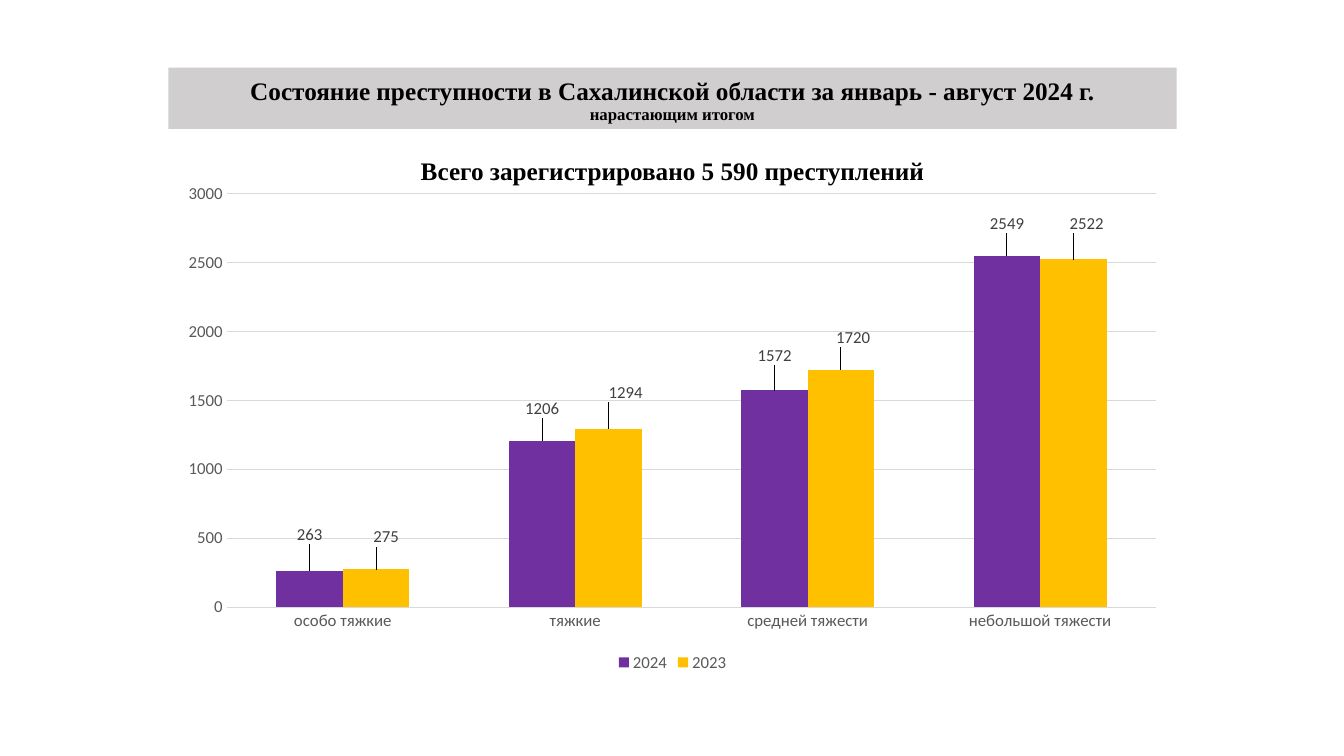
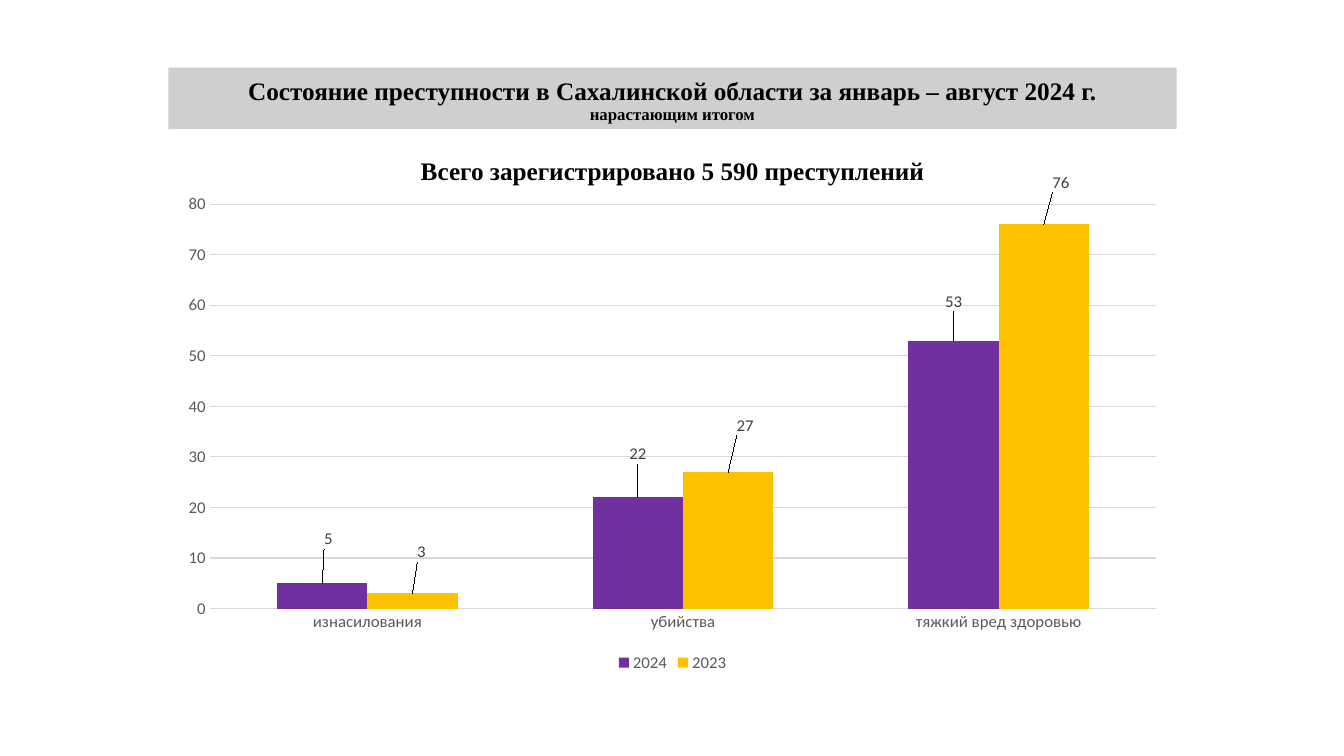
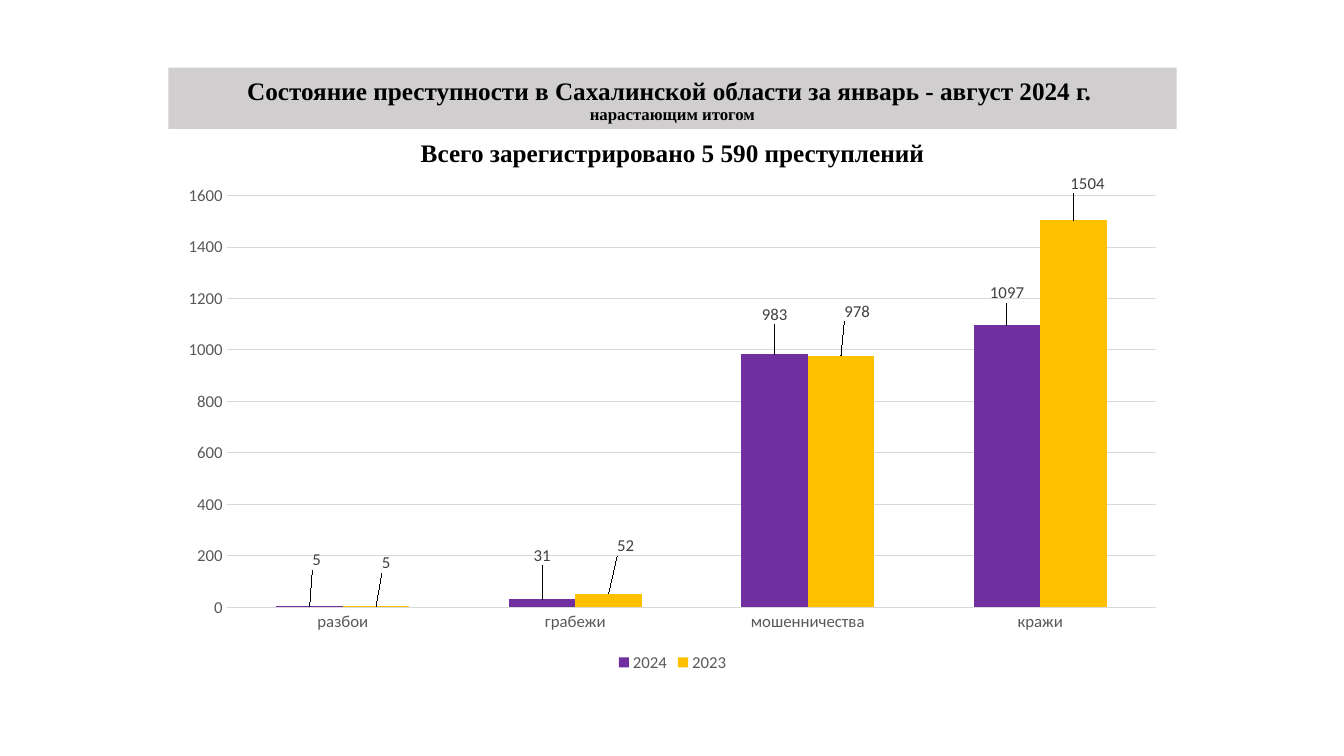
from dataclasses import dataclass
from typing import Any

from lxml import etree
from pptx import Presentation
from pptx import util as u
from pptx.chart import data
from pptx.dml.color import RGBColor
from pptx.enum import chart as ch
from pptx.enum import text
from pptx.oxml.ns import qn

COLORS = {
    "band": "D0CECE",
    "title": "000000",
    "axis": "595959",
    "label": "404040",
    "grid": "D9D9D9",
    "2024": "7030A0",
    "2023": "FFC000",
}
HEADING_FONT = "Times New Roman"
CHART_FONT = "Calibri"
LEFT, WIDTH = u.Inches(1.67), u.Inches(10)
TOTAL = "Всего зарегистрировано 5 590 преступлений"
PERIOD_NOTE = "нарастающим итогом"


@dataclass(frozen=True)
class YearSeries:
    year: str
    values: tuple[int, ...]
    label_shifts: tuple[tuple[float, float], ...]


@dataclass(frozen=True)
class CrimeSlide:
    heading: str
    total_top: float
    categories: tuple[str, ...]
    years: tuple[YearSeries, ...]


CRIME_SLIDES = (
    CrimeSlide(
        "Состояние преступности в Сахалинской области за январь - август 2024 г.",
        1.55,
        ("особо тяжкие", "тяжкие", "средней тяжести", "небольшой тяжести"),
        (
            YearSeries("2024", (263, 1206, 1572, 2549),
                       ((0, -4.4), (0, -3.6), (0, -4.2), (0, -3.6))),
            YearSeries("2023", (275, 1294, 1720, 2522),
                       ((1, -3.6), (1.7, -4.4), (1.2, -3.6), (1.3, -4.4))),
        ),
    ),
    CrimeSlide(
        "Состояние преступности в Сахалинской области за январь – август 2024 г.",
        1.55,
        ("изнасилования", "убийства", "тяжкий вред здоровью"),
        (
            YearSeries("2024", (5, 22, 53),
                       ((0.6, -6.2), (0, -6), (0, -5.2))),
            YearSeries("2023", (3, 27, 76),
                       ((0.9, -5.6), (1.7, -6.6), (1.7, -5.6))),
        ),
    ),
    CrimeSlide(
        "Состояние преступности в Сахалинской области за январь - август 2024 г. ",
        1.37,
        ("разбои", "грабежи", "мошенничества", "кражи"),
        (
            YearSeries("2024", (5, 31, 983, 1097),
                       ((0.7, -6.4), (0, -6), (0, -5.2), (0, -3.6))),
            YearSeries("2023", (5, 52, 978, 1504),
                       ((1, -5.8), (1.7, -6.8), (1.6, -6), (1.4, -4.6))),
        ),
    ),
)


def apply_format(target: Any, values: dict[str, Any]) -> None:
    for name, value in values.items():
        setattr(target, name, value)


def style_font(font: Any, face: str, size: float, color: str, bold: bool = False) -> None:
    apply_format(font, {"name": face, "size": u.Pt(size), "bold": bold})
    font.color.rgb = RGBColor.from_string(COLORS[color])


def add_heading(slide: Any, heading: str) -> None:
    band = slide.shapes.title
    apply_format(band, {"left": LEFT, "top": u.Inches(0.67),
                        "width": WIDTH, "height": u.Inches(0.61)})
    band.fill.solid()
    band.fill.fore_color.rgb = RGBColor.from_string(COLORS["band"])
    apply_format(band.text_frame, {"vertical_anchor": text.MSO_ANCHOR.BOTTOM,
                                   "auto_size": text.MSO_AUTO_SIZE.NONE,
                                   "word_wrap": True})
    paragraph = band.text_frame.paragraphs[0]
    apply_format(paragraph, {"alignment": text.PP_ALIGN.CENTER, "line_spacing": 0.9})
    for wording, size in ((heading, 18), (PERIOD_NOTE, 12)):
        if paragraph.runs:
            paragraph.add_line_break()
        run = paragraph.add_run()
        run.text = wording
        style_font(run.font, HEADING_FONT, size, "title", True)


def add_total(slide: Any, top: float) -> None:
    total = slide.shapes.add_textbox(LEFT, u.Inches(top), WIDTH, u.Inches(0.36))
    total.text_frame.word_wrap = True
    paragraph = total.text_frame.paragraphs[0]
    apply_format(paragraph, {"text": TOTAL, "alignment": text.PP_ALIGN.CENTER,
                             "line_spacing": 0.8, "space_before": u.Pt(10)})
    style_font(paragraph.runs[0].font, HEADING_FONT, 18, "title", True)


def shift_label(label_xml: Any, shift: tuple[float, float]) -> None:
    layout = etree.Element(qn("c:layout"))
    manual = etree.SubElement(layout, qn("c:manualLayout"))
    for axis, percent in zip("xy", shift):
        etree.SubElement(manual, qn(f"c:{axis}")).set("val", f"{percent / 100:.3f}")
    label_xml.find(qn("c:idx")).addnext(layout)


def style_series(series: Any, year: YearSeries) -> None:
    series.format.fill.solid()
    series.format.fill.fore_color.rgb = RGBColor.from_string(COLORS[year.year])
    series.invert_if_negative = False
    outside = ch.XL_LABEL_POSITION.OUTSIDE_END
    apply_format(series.data_labels, {"show_value": True, "position": outside})
    style_font(series.data_labels.font, CHART_FONT, 12, "label")
    for index in range(len(year.values)):
        label = series.points[index].data_label
        label.position = outside
        style_font(label.font, CHART_FONT, 12, "label")
    for label_xml, shift in zip(series._element.xpath("c:dLbls/c:dLbl"), year.label_shifts):
        shift_label(label_xml, shift)


def add_crime_chart(slide: Any, content: CrimeSlide) -> None:
    crimes = data.CategoryChartData()
    crimes.categories = content.categories
    for year in content.years:
        crimes.add_series(year.year, year.values)
    chart = slide.shapes.add_chart(
        ch.XL_CHART_TYPE.COLUMN_CLUSTERED, LEFT, u.Inches(1.72), WIDTH, u.Inches(4.99), crimes
    ).chart
    style_font(chart.font, CHART_FONT, 10, "title")
    apply_format(chart, {"has_title": False, "has_legend": True})
    apply_format(chart.legend, {"position": ch.XL_LEGEND_POSITION.BOTTOM,
                                "include_in_layout": False})
    style_font(chart.legend.font, CHART_FONT, 12, "axis")
    for axis in (chart.category_axis, chart.value_axis):
        apply_format(axis, {"major_tick_mark": ch.XL_TICK_MARK.NONE,
                            "minor_tick_mark": ch.XL_TICK_MARK.NONE})
        axis.format.line.fill.background()
        style_font(axis.tick_labels.font, CHART_FONT, 12, "axis")
    grid = chart.value_axis.major_gridlines.format.line
    grid.width = u.Pt(0.75)
    grid.color.rgb = RGBColor.from_string(COLORS["grid"])
    plot = chart.plots[0]
    apply_format(plot, {"gap_width": 150, "overlap": 0, "vary_by_categories": False})
    for series, year in zip(plot.series, content.years):
        style_series(series, year)


def main() -> None:
    deck = Presentation()
    apply_format(deck, {"slide_width": u.Inches(13.33), "slide_height": u.Inches(7.5)})
    title_only = deck.slide_layouts.get_by_name("Title Only")
    for content in CRIME_SLIDES:
        slide = deck.slides.add_slide(title_only)
        add_heading(slide, content.heading)
        add_total(slide, content.total_top)
        add_crime_chart(slide, content)
    deck.save("out.pptx")


if __name__ == "__main__":
    main()
